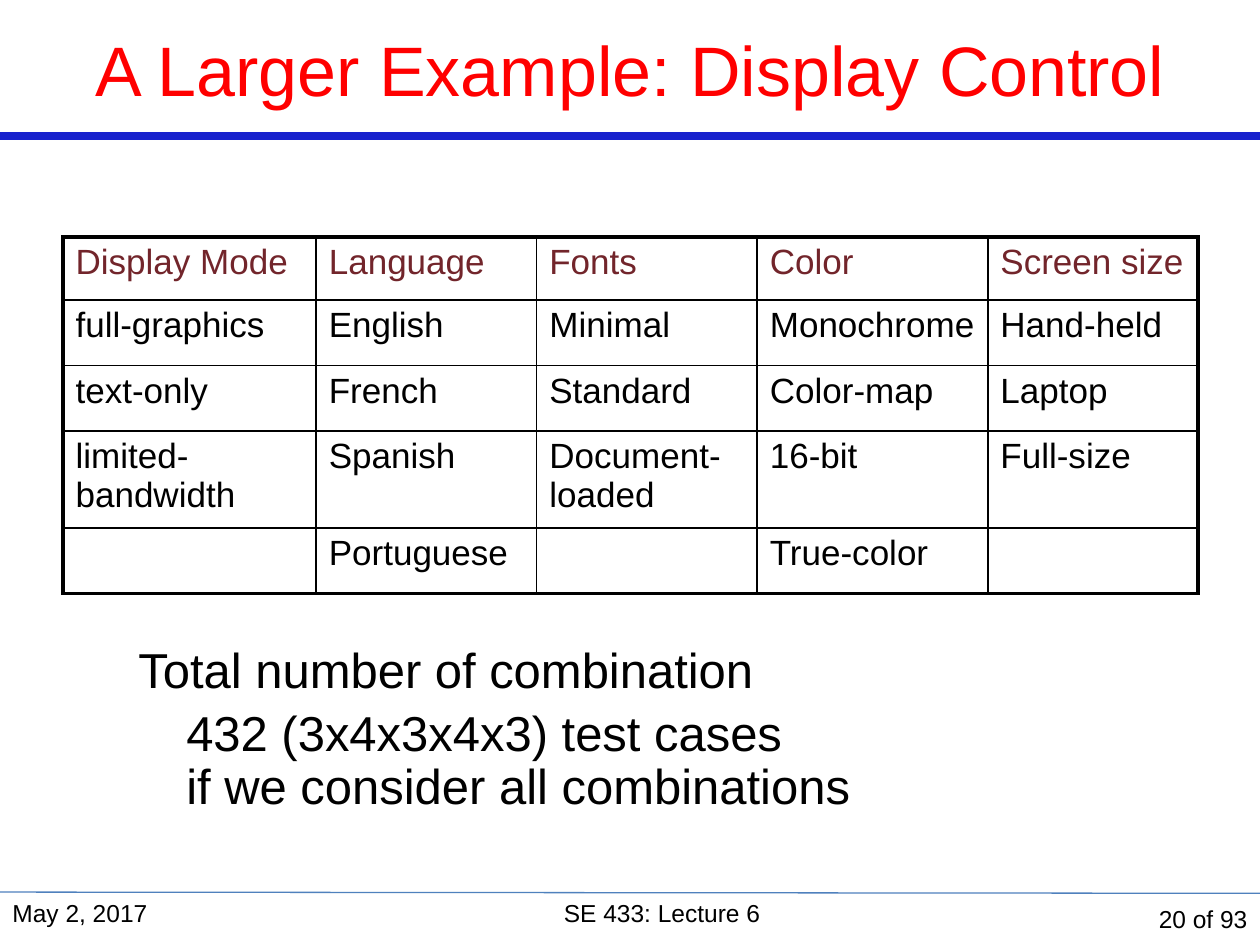
from lxml.etree import SubElement
from pptx import Presentation
from pptx.dml.color import RGBColor
from pptx.enum.shapes import MSO_CONNECTOR as Connector
from pptx.enum.text import MSO_ANCHOR as Anchor, PP_ALIGN as Align
from pptx.oxml.ns import qn
from pptx.util import Inches, Pt

BLACK = "000000"
HEADERS = ["Display Mode", "Language", "Fonts", "Color", "Screen size"]
OPTIONS = [
    ["full-graphics", "English", "Minimal", "Monochrome", "Hand-held"],
    ["text-only", "French", "Standard", "Color-map", "Laptop"],
    ["limited-bandwidth", "Spanish", "Document-loaded", "16-bit", "Full-size"],
    ["", "Portuguese", "", "True-color", ""],
]
COLUMN_WIDTHS = [2.01, 1.75, 1.75, 1.83, 1.67]
ROW_HEIGHTS = [0.5, 0.52, 0.52, 0.77, 0.52]


def color(value):
    """Turn a hex string into a colour."""
    return RGBColor.from_string(value)


def write(paragraph, text, size, hex_color=BLACK, **formats):
    """Fill a paragraph with Arial text and apply paragraph formats."""
    paragraph.text = text
    paragraph.font.size = Pt(size)
    for run in paragraph.runs:
        for name, value in {"name": "Arial", "size": Pt(size), "bold": False}.items():
            setattr(run.font, name, value)
        run.font.color.rgb = color(hex_color)
    for name, value in formats.items():
        setattr(paragraph, name, value)


def add_text(slide, box, anchor=Anchor.TOP):
    """Add a wrapping text box and return its text frame."""
    frame = slide.shapes.add_textbox(*map(Inches, box)).text_frame
    frame.word_wrap = True
    frame.vertical_anchor = anchor
    return frame


def add_rule(slide, top, hex_color, width, drop=0):
    """Draw a line across the whole slide."""
    rule = slide.shapes.add_connector(
        Connector.STRAIGHT, 0, Inches(top), Inches(10), Inches(top + drop))
    rule.line.color.rgb = color(hex_color)
    rule.line.width = Pt(width)
    SubElement(rule._element.spPr, qn("a:effectLst"))


def add_title(slide, box, text):
    """Place and format the title placeholder."""
    title = slide.shapes.title
    for name, value in zip(("left", "top", "width", "height"), box):
        setattr(title, name, Inches(value))
    title.text_frame.vertical_anchor = Anchor.MIDDLE
    write(title.text_frame.paragraphs[0], text, 40, "FF0000", alignment=Align.CENTER)


def set_borders(cell, outer_sides):
    """Give a cell black borders, thicker on the outer sides."""
    properties = cell._tc.get_or_add_tcPr()
    for side in "LRTB":
        width = Pt(2.25 if side in outer_sides else 1)
        line = SubElement(properties, qn(f"a:ln{side}"), w=str(width))
        fill = SubElement(line, qn("a:solidFill"))
        SubElement(fill, qn("a:srgbClr"), val=BLACK)


def add_options_table(slide, box):
    """Add the table of display options."""
    rows = [HEADERS] + OPTIONS
    last_row, last_column = len(rows) - 1, len(HEADERS) - 1
    table = slide.shapes.add_table(len(rows), len(HEADERS), *map(Inches, box)).table
    table.first_row = table.horz_banding = False
    for column, width in zip(table.columns, COLUMN_WIDTHS):
        column.width = Inches(width)
    for row, height in zip(table.rows, ROW_HEIGHTS):
        row.height = Inches(height)
    for i, texts in enumerate(rows):
        for j, text in enumerate(texts):
            cell = table.cell(i, j)
            write(cell.text_frame.paragraphs[0], text, 20, BLACK if i else "72252B")
            edges = {"L": j == 0, "R": j == last_column, "T": i == 0, "B": i == last_row}
            set_borders(cell, [side for side, outer in edges.items() if outer])
            cell.fill.background()


def add_summary(slide, box):
    """Add the count of combinations with a hanging indent."""
    frame = add_text(slide, box)
    lines = ["Total number of combination",
             "\t432 (3x4x3x4x3) test cases \vif we consider all combinations"]
    for i, text in enumerate(lines):
        paragraph = frame.add_paragraph() if i else frame.paragraphs[0]
        write(paragraph, text, 28, line_spacing=0.9, space_before=Pt(5.6))
        properties = paragraph._p.get_or_add_pPr()
        properties.set("marL", str(Inches(0.38)))
        properties.set("indent", str(Inches(-0.38)))


def add_footer(slide, top, height):
    """Add the date, lecture name and page number."""
    parts = [
        ("May 2, 2017", 0, 2.17, Align.LEFT, Anchor.TOP),
        ("SE 433: Lecture 6", 2.17, 6.17, Align.CENTER, Anchor.TOP),
        ("20 of 93", 8.33, 1.67, Align.RIGHT, Anchor.MIDDLE),
    ]
    add_rule(slide, top, "4F81BD", 0.75, drop=0.01)
    for text, left, width, alignment, anchor in parts:
        frame = add_text(slide, (left, top, width, height), anchor)
        write(frame.paragraphs[0], text, 14, alignment=alignment)


def main():
    """Build and save the slide."""
    presentation = Presentation()
    presentation.slide_width, presentation.slide_height = Inches(10), Inches(7.5)
    slide = presentation.slides.add_slide(presentation.slide_layouts[5])
    add_rule(slide, 1.08, "1822CD", 4.5)
    add_title(slide, (0, 0, 10, 1.08), "A Larger Example: Display Control")
    add_options_table(slide, (0.5, 1.88, 9, 2.82))
    add_summary(slide, (1, 5.08, 8.75, 1.75))
    add_footer(slide, 7.08, 0.42)
    presentation.save("out.pptx")


if __name__ == "__main__":
    main()
